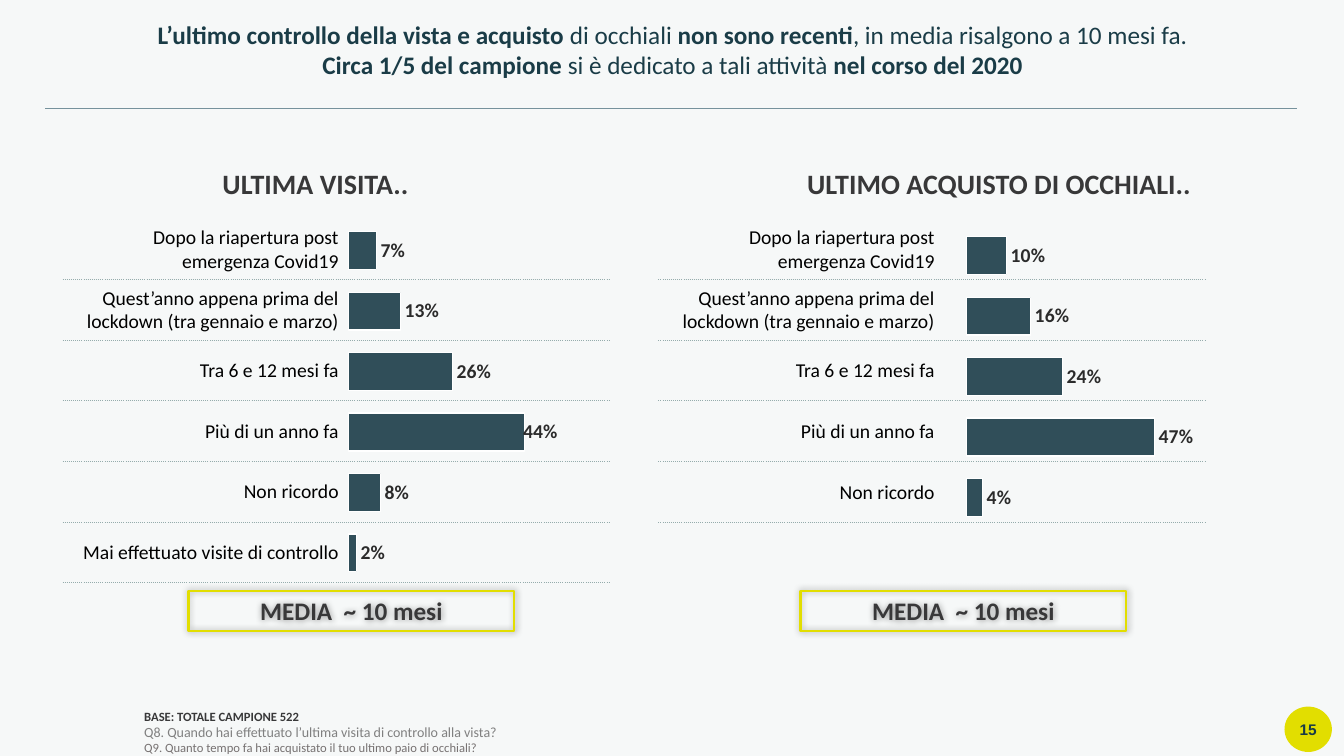
import pptx
import pptx.chart.data
import pptx.dml.color
import pptx.enum.chart
import pptx.enum.shapes
import pptx.enum.text
import pptx.oxml
import pptx.oxml.ns
import pptx.util

RGB = pptx.dml.color.RGBColor
BACKGROUND = RGB(0xF6, 0xF8, 0xF8)
TITLE = RGB(0x1A, 0x3C, 0x47)
NUMBER = RGB(0x19, 0x3B, 0x47)
RULE = RGB(0x76, 0x92, 0x9C)
DOTS = RGB(0x95, 0xAC, 0xAC)
BAR = RGB(0x30, 0x4E, 0x59)
LABEL = RGB(0x2B, 0x2B, 0x2B)
DARK = RGB(0x38, 0x38, 0x39)
GREY = RGB(0x80, 0x80, 0x80)
WARM_GREY = RGB(0x76, 0x71, 0x71)
YELLOW = RGB(0xE2, 0xDE, 0x00)
WHITE = RGB(0xFF, 0xFF, 0xFF)
BLACK = RGB(0x00, 0x00, 0x00)

ALIGN = pptx.enum.text.PP_ALIGN
ANCHOR = pptx.enum.text.MSO_ANCHOR
SHAPE = pptx.enum.shapes.MSO_SHAPE
GROW = pptx.enum.text.MSO_AUTO_SIZE.SHAPE_TO_FIT_TEXT
NO_STYLE = "{2D5ABB26-0587-4C30-8999-92F81FD0307C}"
PX = 9144  # 100 px to the inch


def parse_xml(tag, body, attrs=""):
    prefix = tag.split(":")[0]
    ns = pptx.oxml.ns.nsdecls(*dict.fromkeys((prefix, "a")))
    return pptx.oxml.parse_xml(f"<{tag} {ns} {attrs}>{body}</{tag}>")


def put(obj, values):
    for name, value in values.items():
        setattr(obj, name, value)


class SlideBuilder:
    font = "Calibri"

    def __init__(self, prs):
        self.s = prs.slides.add_slide(prs.slide_layouts[6])
        self.s.background.fill.solid()
        self.s.background.fill.fore_color.rgb = BACKGROUND

    def box(self, *px):
        return [v * PX for v in px]

    def style(self, font, size, color, bold=False, name=None):
        put(font, {"size": pptx.util.Pt(size), "bold": bold, "name": name or self.font})
        font.color.rgb = color

    def fill_text(self, tf, paragraphs, align, frame, spacing=None, name=None):
        """Each paragraph is a list of (text, size, color, bold) runs."""
        put(tf, {"word_wrap": True, **frame})
        for i, runs in enumerate(paragraphs):
            p = tf.paragraphs[0] if i == 0 else tf.add_paragraph()
            put(p, {"alignment": align, "line_spacing": spacing})
            for text, size, color, bold in runs:
                r = p.add_run()
                r.text = text
                self.style(r.font, size, color, bold, name)

    def text(self, at, paragraphs, align=ALIGN.CENTER, spacing=None, **frame):
        sp = self.s.shapes.add_textbox(*self.box(*at))
        self.fill_text(sp.text_frame, paragraphs, align, frame, spacing)

    def line(self, x1, y1, x2, y2):
        kind = pptx.enum.shapes.MSO_CONNECTOR.STRAIGHT
        sp = self.s.shapes.add_connector(kind, *self.box(x1, y1, x2, y2))
        sp.line.color.rgb = RULE
        sp.line.width = pptx.util.Pt(0.5)
        sp._element.spPr.append(parse_xml("a:effectLst", ""))

    def badge(self, at, number):
        sp = self.s.shapes.add_shape(SHAPE.OVAL, *self.box(*at))
        sp.shadow.inherit = False
        sp.fill.solid()
        sp.fill.fore_color.rgb = YELLOW
        sp.line.fill.background()
        margins = dict.fromkeys(["margin_left", "margin_right", "margin_top", "margin_bottom"], 0)
        frame = {"vertical_anchor": ANCHOR.MIDDLE, **margins}
        self.fill_text(sp.text_frame, [[(number, 11, NUMBER, True)]], ALIGN.CENTER, frame, name="Arial")

    def framed(self, at, text):
        sp = self.s.shapes.add_shape(SHAPE.RECTANGLE, *self.box(*at))
        sp.fill.background()
        sp.line.color.rgb = YELLOW
        sp.line.width = pptx.util.Pt(1.5)
        sp.shadow.inherit = False
        sp._element.spPr.find(pptx.oxml.ns.qn("a:effectLst")).append(parse_xml(
            "a:outerShdw", '<a:srgbClr val="000000"><a:alpha val="40000"/></a:srgbClr>',
            'blurRad="63500" dist="0" dir="0" algn="ctr" rotWithShape="0"'))
        frame = {"auto_size": GROW, "vertical_anchor": ANCHOR.TOP}
        self.fill_text(sp.text_frame, [[(text, 18, DARK, True)]], ALIGN.CENTER, frame)

    def table(self, at, widths, labels):
        tbl_shape = self.s.shapes.add_table(len(labels), len(widths), *self.box(*at))
        tbl = tbl_shape.table
        put(tbl, {"first_row": False, "horz_banding": False})
        tbl._tbl.tblPr.find(pptx.oxml.ns.qn("a:tableStyleId")).text = NO_STYLE
        for col, width in zip(tbl.columns, widths):
            col.width = width * PX
        frame = {"margin_left": PX, "margin_right": PX, "margin_top": PX, "margin_bottom": 0,
                 "vertical_anchor": ANCHOR.MIDDLE}
        for i, label in enumerate(labels):
            tbl.rows[i].height = at[3] * PX // len(labels)
            for cell in tbl.rows[i].cells:
                put(cell, frame)
                tcPr = cell._tc.get_or_add_tcPr()
                for tag in (["a:lnT"] if i == 0 else []) + ["a:lnB"]:
                    # The top edge of the table is hidden
                    paint = ("<a:noFill/>" if tag == "a:lnT" else
                             f'<a:solidFill><a:srgbClr val="{DOTS}"/></a:solidFill>'
                             '<a:prstDash val="sysDot"/>')
                    tcPr.append(parse_xml(tag, paint, 'w="6350"'))
                cell.fill.background()
            runs = [[(label, 14, BLACK, False)]]
            self.fill_text(tbl.cell(i, 0).text_frame, runs, ALIGN.RIGHT, {})

    def bars(self, at, values, nudged=None):
        data = pptx.chart.data.CategoryChartData(number_format="0%")
        data.categories = [str(n + 1) for n in range(len(values))]
        data.add_series("Series 1", values)
        kind = pptx.enum.chart.XL_CHART_TYPE.BAR_CLUSTERED
        chart = self.s.shapes.add_chart(kind, *self.box(*at), data).chart
        put(chart, {"has_legend": False, "has_title": False})
        self.style(chart.font, 9, LABEL)
        put(chart.category_axis, {"reverse_order": True, "visible": False,
                                  "has_major_gridlines": False})
        put(chart.value_axis, {"minimum_scale": 0, "maximum_scale": 0.5, "major_unit": 20,
                               "visible": False, "has_major_gridlines": False})
        plot = chart.plots[0]
        put(plot, {"gap_width": 60, "vary_by_categories": False})
        ser = plot.series[0]
        ser.format.fill.solid()
        ser.format.fill.fore_color.rgb = BAR
        ser.format.line.color.rgb = WHITE
        ser.format.line.width = pptx.util.Pt(1)
        labels = ser.data_labels
        put(labels, {"show_value": True, "number_format": "0%", "number_format_is_linked": False,
                     "position": pptx.enum.chart.XL_LABEL_POSITION.OUTSIDE_END})
        self.style(labels.font, 14, LABEL, True)
        if nudged is not None:
            flags = "".join(f'<c:show{n} val="{int(n == "Val")}"/>' for n in
                            ("LegendKey", "Val", "CatName", "SerName", "Percent", "BubbleSize"))
            labels._element.insert(0, parse_xml(
                "c:dLbl", f'<c:idx val="{nudged}"/><c:layout><c:manualLayout><c:x val="-0.02"/>'
                f'<c:y val="0"/></c:manualLayout></c:layout><c:dLblPos val="outEnd"/>{flags}'))
        # Fixed inner plot area
        area = chart._chartSpace.chart.plotArea
        for old in area.findall(pptx.oxml.ns.qn("c:layout")):
            area.remove(old)
        place = "".join(f'<c:{k} val="{v}"/>' for k, v in (
            ("layoutTarget", "inner"), ("xMode", "edge"), ("yMode", "edge"),
            ("x", 0.054), ("y", 0.018), ("w", 0.724), ("h", 0.962)))
        area.insert(0, parse_xml("c:layout", f"<c:manualLayout>{place}</c:manualLayout>"))


def main():
    prs = pptx.Presentation()
    prs.slide_width, prs.slide_height = 1333 * PX, 750 * PX
    b = SlideBuilder(prs)

    # Page number and header rule
    b.badge((1274, 701, 47, 45), "15")
    b.line(45, 108, 1286, 108)

    # Title
    b.text((34, 14, 1266, 71), [
        [("L’ultimo controllo della vista e acquisto ", 18, TITLE, True),
         ("di occhiali ", 18, TITLE, False),
         ("non sono recenti", 18, TITLE, True),
         (", in media risalgono a 10 mesi fa.", 18, TITLE, False)],
        [("Circa 1/5 del campione ", 18, TITLE, True),
         ("si è dedicato a tali attività ", 18, TITLE, False),
         ("nel corso del 2020", 18, TITLE, True)]], auto_size=GROW)

    # Two panels: heading, answer rows, bars, average
    answers = ["Dopo la riapertura post emergenza Covid19",
               "Quest’anno appena prima del lockdown (tra gennaio e marzo)",
               "Tra 6 e 12 mesi fa", "Più di un anno fa", "Non ricordo",
               "Mai effettuato visite di controllo"]
    panels = [
        ("ULTIMA VISITA..", -2, (62, 217, 543, 361), answers,
         (331, 212, 274, 374), [0.07, 0.13, 0.26, 0.44, 0.08, 0.02], 3, 187),
        ("ULTIMO ACQUISTO DI OCCHIALI..", 676, (653, 217, 543, 301), answers[:5],
         (944, 217, 274, 374), [0.1, 0.16, 0.24, 0.47, 0.04, None], None, 794)]
    for heading, x, rows_at, rows, bars_at, values, nudged, average_x in panels:
        b.text((x, 160, 630, 44), [[(heading, 20, DARK, True)]], auto_size=GROW)
        b.table(rows_at, (275, 268), rows)
        b.bars(bars_at, values, nudged)
        b.framed((average_x, 586, 323, 40), "MEDIA  ~ 10 mesi")

    # Base and questions
    b.text((143, 656, 1191, 93), [
        [("BASE: TOTALE CAMPIONE 522", 9, DARK, True)],
        [("Q8. Quando hai effettuato l’ultima visita di controllo alla vista?", 10, GREY, False)],
        [("Q9. Quanto tempo fa hai acquistato il tuo ultimo paio di occhiali?", 9, WARM_GREY, False)]],
        ALIGN.LEFT, 0.95, vertical_anchor=ANCHOR.BOTTOM,
        margin_left=0, margin_right=0, margin_top=0, margin_bottom=0)

    prs.save("out.pptx")


if __name__ == "__main__":
    main()
